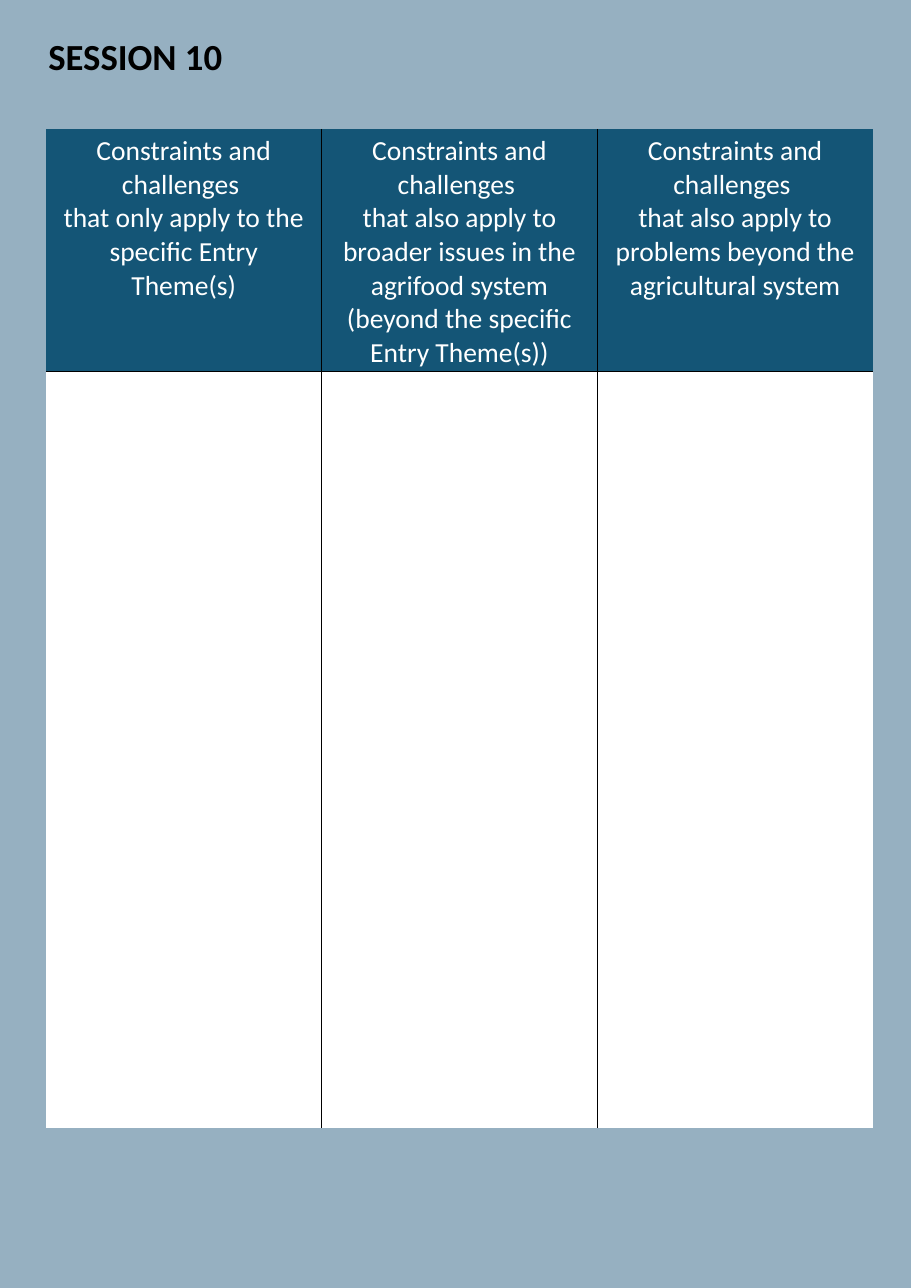
from lxml.etree import SubElement
from pptx import Presentation
from pptx.dml.color import RGBColor
from pptx.enum.text import MSO_AUTO_SIZE, PP_ALIGN
from pptx.oxml.ns import qn
from pptx.util import Pt

BACK = RGBColor(0x96, 0xB0, 0xC1)
BLUE = RGBColor(0x14, 0x55, 0x76)
WHITE = RGBColor(0xFF, 0xFF, 0xFF)
BLACK = RGBColor(0, 0, 0)
FONT = "Calibri"

LEAD = "Constraints and challenges "
HEADS = [
    "that only apply to the specific Entry Theme(s)",
    "that also apply to broader issues in the agrifood system "
    "(beyond the specific Entry Theme(s))",
    "that also apply to problems beyond the agricultural system",
]


def style(para, size, color, bold=False):
    font = para.font
    font.name, font.size, font.bold = FONT, Pt(size), bold
    font.color.rgb = color


def add_title(slide, left, top, width, height):
    box = slide.shapes.add_textbox(Pt(left), Pt(top), Pt(width), Pt(height))
    frame = box.text_frame
    frame.word_wrap = True
    frame.auto_size = MSO_AUTO_SIZE.SHAPE_TO_FIT_TEXT
    frame.text = "SESSION 10"
    style(frame.paragraphs[0], 24, BLACK, True)


def set_edges(cell, **edges):
    props = cell._tc.get_or_add_tcPr()
    for side in "LRTB":
        line = SubElement(props, qn("a:ln" + side), w=str(Pt(0.5)))
        if edges[side]:
            fill = SubElement(line, qn("a:solidFill"))
            SubElement(fill, qn("a:srgbClr"), val=str(BLACK))
        else:
            SubElement(line, qn("a:noFill"))


def add_grid(slide, left, top, width, heights):
    count = len(HEADS)
    table = slide.shapes.add_table(
        len(heights), count, Pt(left), Pt(top), Pt(width), Pt(sum(heights))
    ).table
    table.first_row = table.horz_banding = False
    for col in table.columns:
        col.width = Pt(width / count)
    for r, height in enumerate(heights):
        table.rows[r].height = Pt(height)
        for c, head in enumerate(HEADS):
            cell = table.cell(r, c)
            set_edges(cell, L=c > 0, R=c < count - 1,
                      T=r > 0, B=r < len(heights) - 1)
            cell.fill.solid()
            cell.fill.fore_color.rgb = WHITE if r else BLUE
            if r == 0:
                cell.text = LEAD + "\n" + head
                for para in cell.text_frame.paragraphs:
                    para.alignment = PP_ALIGN.CENTER
                    style(para, 18, WHITE)


def main():
    deck = Presentation()
    deck.slide_width, deck.slide_height = Pt(595.44), Pt(841.68)
    slide = deck.slides.add_slide(deck.slide_layouts[6])
    slide.background.fill.solid()
    slide.background.fill.fore_color.rgb = BACK
    add_title(slide, 24.5, 18.7, 546, 36)
    add_grid(slide, 30, 84.2, 540.6, [157, 494.6])
    deck.save("out.pptx")


if __name__ == "__main__":
    main()
